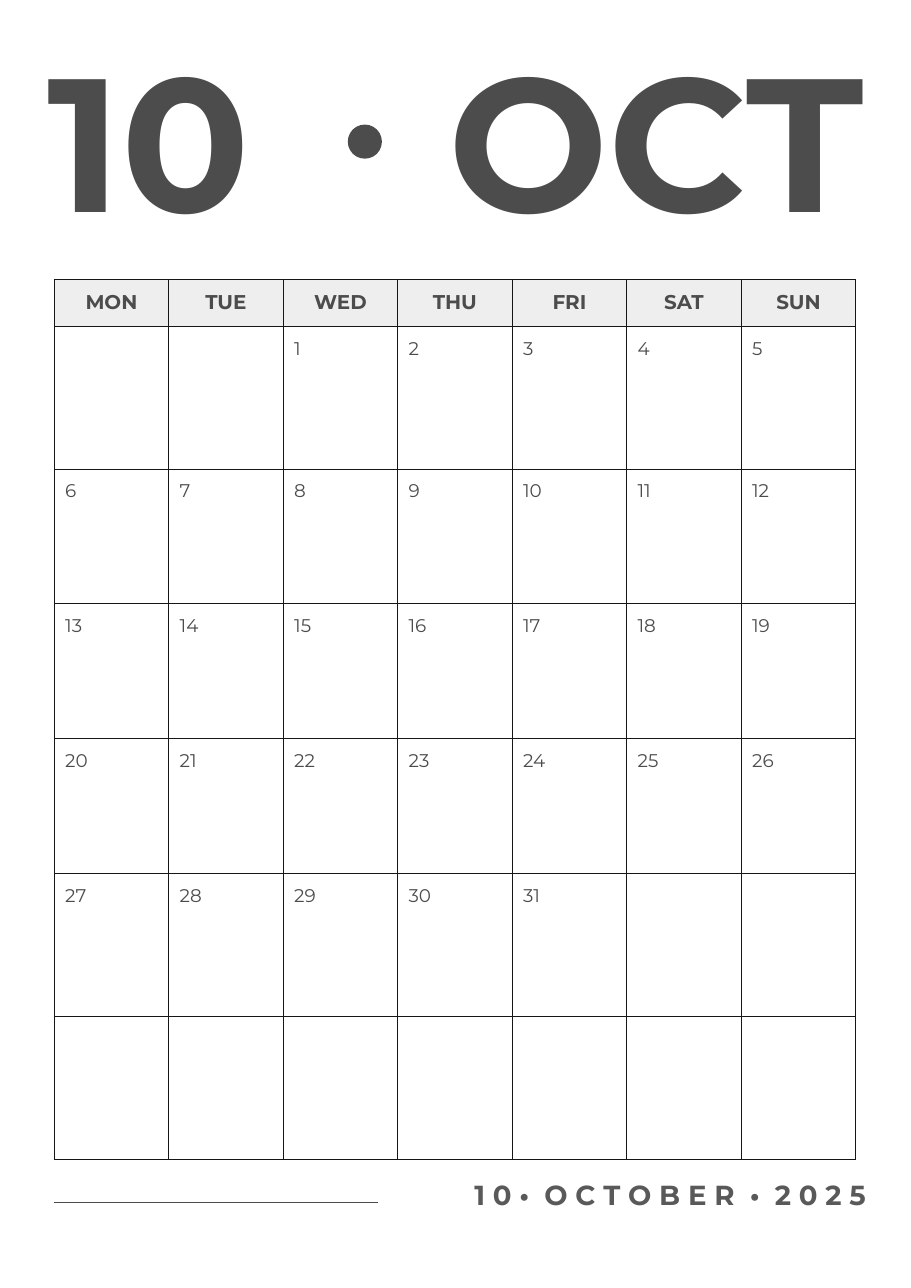
from dataclasses import dataclass

from lxml.etree import SubElement
from pptx import Presentation
from pptx.dml.color import RGBColor as RGB
from pptx.enum.shapes import MSO_CONNECTOR, MSO_SHAPE
from pptx.enum.text import MSO_ANCHOR as Anchor, MSO_AUTO_SIZE as AutoSize, PP_ALIGN as Align
from pptx.oxml.ns import qn
from pptx.util import Pt


@dataclass(frozen=True)
class Theme:
    font: str = "Montserrat"
    ink: str = "4C4C4C"
    footer_ink: str = "595959"
    grid: str = "161616"
    header_fill: str = "EEEEEE"
    month_size: float = 124
    footer_size: float = 18
    header_size: float = 13
    day_size: float = 12
    rule: float = 0.75


THEME = Theme()
WEEKDAYS = ["MON", "TUE", "WED", "THU", "FRI", "SAT", "SUN"]
WEEKS, FIRST_WEEKDAY, DAYS = 6, 2, 31
LEFT, COL_W = 35.4, 74.86
HEADER_H, DAY_H, BLANK_DAY_H, NOTE_H = 30.6, 28.8, 34.4, 59
FOOTER_GAP = 4.8


def set_attrs(obj, values):
    for name, value in values.items():
        setattr(obj, name, value)


def add_run(p, text, size, color, bold=False):
    r = p.add_run()
    r.text = text
    set_attrs(r.font, {"name": THEME.font, "size": Pt(size), "bold": bold})
    r.font.color.rgb = RGB.from_string(color)
    return r


def frame_text(sp, box, align):
    """Place a text shape without insets and return its first paragraph."""
    set_attrs(sp, dict(zip(("left", "top", "width", "height"), map(Pt, box))))
    tf = sp.text_frame
    set_attrs(tf, {"margin_left": 0, "margin_top": 0, "margin_right": 0, "margin_bottom": 0,
                   "word_wrap": True, "auto_size": AutoSize.NONE,
                   "vertical_anchor": Anchor.TOP})
    p = tf.paragraphs[0]
    set_attrs(p, {"alignment": align, "line_spacing": 1.0})
    return p


def add_textbox(slide, box, align):
    return frame_text(slide.shapes.add_textbox(*map(Pt, box)), box, align)


def add_dot(slide, left, top, size):
    sp = slide.shapes.add_shape(MSO_SHAPE.OVAL, Pt(left), Pt(top), Pt(size), Pt(size))
    sp.shadow.inherit = False
    sp.fill.solid()
    sp.fill.fore_color.rgb = RGB.from_string(THEME.ink)
    sp.line.fill.background()


def add_rule(slide, left, right, y):
    line = slide.shapes.add_connector(MSO_CONNECTOR.STRAIGHT, Pt(left), Pt(y), Pt(right), Pt(y))
    line.line.color.rgb = RGB.from_string(THEME.ink)
    line.line.width = Pt(THEME.rule)
    SubElement(line._element.spPr, qn("a:effectLst"))


def set_borders(cell, sides):
    """Draw the given sides (letters of LRTB) and switch the others off."""
    tc_pr = cell._tc.get_or_add_tcPr()
    for side in "LRTB":
        ln = SubElement(tc_pr, qn(f"a:ln{side}"), w=str(Pt(THEME.rule)))
        if side in sides:
            fill = SubElement(ln, qn("a:solidFill"))
            SubElement(fill, qn("a:srgbClr"), val=THEME.grid)
        else:
            SubElement(ln, qn("a:noFill"))


def format_cell(cell, text, sides, header=False):
    set_borders(cell, sides)
    if header:
        cell.fill.solid()
        cell.fill.fore_color.rgb = RGB.from_string(THEME.header_fill)
    else:
        cell.fill.background()
    inset = Pt(7.2) if text else 0
    set_attrs(cell, {"margin_left": inset, "margin_top": inset,
                     "margin_right": inset, "margin_bottom": inset})
    if text:
        p = cell.text_frame.paragraphs[0]
        p.alignment = Align.CENTER if header else Align.LEFT
        size = THEME.header_size if header else THEME.day_size
        add_run(p, text, size, THEME.ink, bold=header)


def calendar_rows():
    """Yield the height, texts and border sides of each table row."""
    yield HEADER_H, WEEKDAYS, "LRTB"
    for week in range(WEEKS):
        first = week * len(WEEKDAYS) - FIRST_WEEKDAY + 1
        days = [str(d) if 1 <= d <= DAYS else "" for d in range(first, first + len(WEEKDAYS))]
        yield (DAY_H if all(days) else BLANK_DAY_H), days, "LRT"
        yield NOTE_H, [""] * len(WEEKDAYS), "LRB"


def add_calendar(slide, top):
    rows = list(calendar_rows())
    height = sum(h for h, _, _ in rows)
    table = slide.shapes.add_table(len(rows), len(WEEKDAYS), Pt(LEFT), Pt(top),
                                   Pt(COL_W * len(WEEKDAYS)), Pt(height)).table
    set_attrs(table, {"first_row": False, "horz_banding": False})
    for col in table.columns:
        col.width = Pt(COL_W)
    for i, (row_height, texts, sides) in enumerate(rows):
        table.rows[i].height = Pt(row_height)
        for j, text in enumerate(texts):
            format_cell(table.cell(i, j), text, sides, header=i == 0)


def add_footer(slide):
    p = add_textbox(slide, (253.4, 770, 312.5, 22), Align.RIGHT)
    for i, word in enumerate(["10•", "OCTOBER", "•", "2025"]):
        if i:
            gap = add_run(p, " ", THEME.footer_size, THEME.footer_ink, bold=True)
            gap._r.get_or_add_rPr().set("spc", str(round(FOOTER_GAP * 100)))
        add_run(p, " ".join(word), THEME.footer_size, THEME.footer_ink, bold=True)


def add_heading(slide):
    number = add_textbox(slide, (31, 15.1, 193.7, 150.5), Align.LEFT)
    month = frame_text(slide.shapes.title, (252, 15.1, 312.5, 150.5), Align.RIGHT)
    for p, text in ((number, "10"), (month, "OCT")):
        add_run(p, text, THEME.month_size, THEME.ink, bold=True)
    add_dot(slide, 227.3, 81.4, 22.3)


def main():
    prs = Presentation()
    set_attrs(prs, {"slide_width": Pt(595.44), "slide_height": Pt(841.68)})
    slide = prs.slides.add_slide(prs.slide_layouts[5])
    add_calendar(slide, 182.6)
    add_rule(slide, LEFT, 247, 786)
    add_footer(slide)
    add_heading(slide)
    prs.save("out.pptx")


if __name__ == "__main__":
    main()
